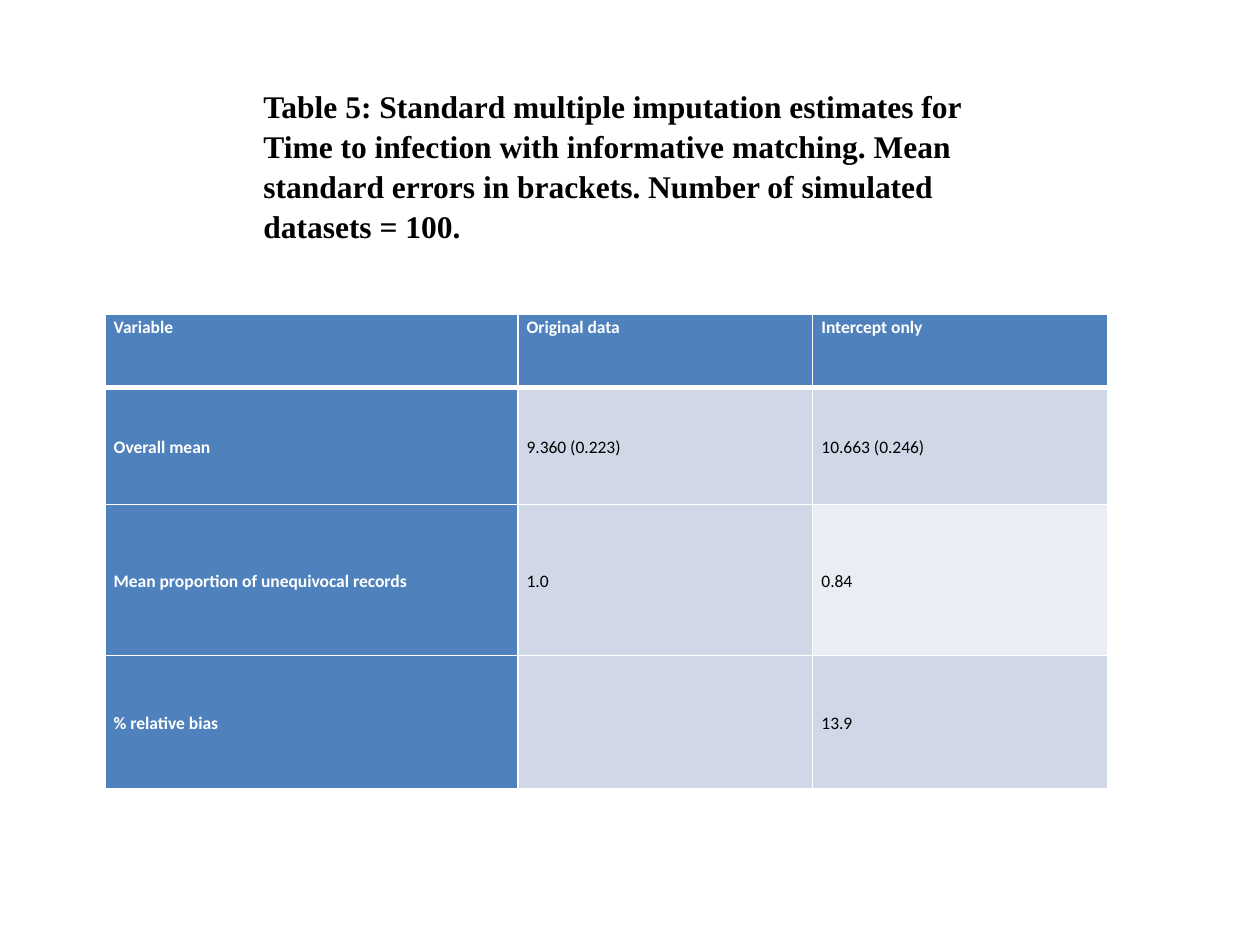
import pptx
import pptx.dml.color
import pptx.enum.text
import pptx.oxml
import pptx.oxml.ns
import pptx.util

Pt = pptx.util.Pt
RGB = pptx.dml.color.RGBColor.from_string
ALIGN = pptx.enum.text.PP_ALIGN
ANCHOR = pptx.enum.text.MSO_ANCHOR

# Content
CAPTION = (
    "Table 5: Standard multiple imputation estimates for Time to infection "
    "with informative matching. Mean standard errors in brackets. "
    "Number of simulated datasets = 100."
)
ESTIMATES = [
    ("Variable", "Original data", "Intercept only"),
    ("Overall mean", "9.360 (0.223)", "10.663 (0.246)"),
    ("Mean proportion of unequivocal records", "1.0", "0.84"),
    ("% relative bias", "", "13.9"),
]

# Look and layout, lengths in points
THEME = {
    "caption": {"name": "Times New Roman", "size": Pt(18), "bold": True, "color": "000000"},
    "heading": {"name": "Calibri", "size": Pt(10), "bold": True, "color": "FFFFFF"},
    "value": {"name": "Calibri", "size": Pt(10), "bold": False, "color": "000000"},
    "heading_fill": "4F81BD",
    "band": "D0D8E8",
    "light_band": "E9EDF4",
    "border": "FFFFFF",
}
SLIDE_SIZE = (720, 540)
CAPTION_BOX = (143.3, 44.6, 447.8, 116.6)
TABLE_CORNER = (60, 179.5)
COLUMN_WIDTHS = (235.9, 168.5, 168.5)
ROW_HEIGHTS = (41.8, 67, 86.4, 76.3)
CELL_MARGIN = 5


def set_all(target, values):
    for name, value in values.items():
        setattr(target, name, value)


def write(paragraph, text, style):
    run = paragraph.add_run()
    run.text = text
    set_all(run.font, {key: style[key] for key in ("name", "size", "bold")})
    run.font.color.rgb = RGB(style["color"])


def add_borders(cell, widths):
    """Put border lines first in the cell properties, before the fill."""
    properties = cell._tc.get_or_add_tcPr()
    for position, (side, width) in enumerate(widths.items()):
        properties.insert(position, pptx.oxml.parse_xml(
            f'<a:{side} {pptx.oxml.ns.nsdecls("a")} w="{int(Pt(width))}">'
            f'<a:solidFill><a:srgbClr val="{THEME["border"]}"/></a:solidFill>'
            f'</a:{side}>'))


def cell_fill(row, column):
    if row == 0 or column == 0:
        return THEME["heading_fill"]
    return THEME["light_band"] if (row, column) == (2, 2) else THEME["band"]


def add_caption(slide):
    caption = slide.shapes.title
    box = map(Pt, CAPTION_BOX)
    set_all(caption, dict(zip(("left", "top", "width", "height"), box)))
    set_all(caption.text_frame, {
        "word_wrap": True,
        "auto_size": pptx.enum.text.MSO_AUTO_SIZE.NONE,
        "vertical_anchor": ANCHOR.TOP,
    })
    paragraph = caption.text_frame.paragraphs[0]
    set_all(paragraph, {"alignment": ALIGN.LEFT, "line_spacing": 1.06})
    write(paragraph, CAPTION, THEME["caption"])


def add_estimates(slide):
    table = slide.shapes.add_table(
        len(ESTIMATES), len(COLUMN_WIDTHS), *map(Pt, TABLE_CORNER),
        Pt(sum(COLUMN_WIDTHS)), Pt(sum(ROW_HEIGHTS))).table
    set_all(table, {"first_col": True, "horz_banding": True})
    for column, width in zip(table.columns, COLUMN_WIDTHS):
        column.width = Pt(width)
    for row, height in zip(table.rows, ROW_HEIGHTS):
        row.height = Pt(height)

    for r, record in enumerate(ESTIMATES):
        for c, text in enumerate(record):
            cell = table.cell(r, c)
            set_all(cell, {
                "margin_left": Pt(CELL_MARGIN), "margin_right": Pt(CELL_MARGIN),
                "margin_top": 0, "margin_bottom": 0,
                "vertical_anchor": ANCHOR.MIDDLE if r else ANCHOR.TOP,
            })
            cell.fill.solid()
            cell.fill.fore_color.rgb = RGB(cell_fill(r, c))
            # A heavier rule parts the header from the body
            add_borders(cell, {"lnL": 1, "lnR": 1,
                               "lnT": 3 if r == 1 else 1,
                               "lnB": 3 if r == 0 else 1})
            if text:
                paragraph = cell.text_frame.paragraphs[0]
                set_all(paragraph, {
                    "alignment": ALIGN.LEFT if r and c == 0 else ALIGN.JUSTIFY,
                    "line_spacing": 1.15, "space_after": Pt(10),
                })
                is_heading = r == 0 or c == 0
                write(paragraph, text, THEME["heading" if is_heading else "value"])


def main():
    deck = pptx.Presentation()
    deck.slide_width, deck.slide_height = map(Pt, SLIDE_SIZE)
    slide = deck.slides.add_slide(deck.slide_layouts.get_by_name("Title Only"))
    add_caption(slide)
    add_estimates(slide)
    deck.save("out.pptx")


if __name__ == "__main__":
    main()
